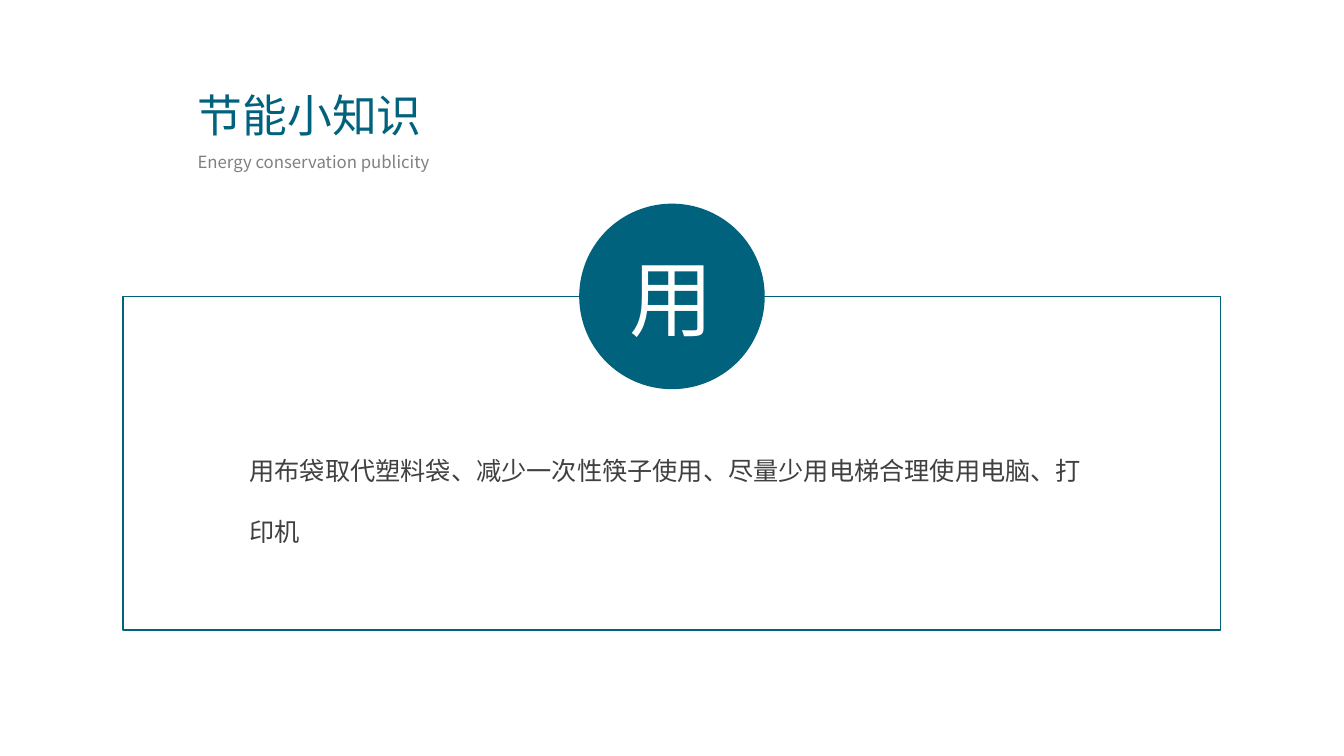
import pptx
import pptx.util
from lxml import etree
from pptx.dml.color import RGBColor
from pptx.enum.shapes import MSO_SHAPE
from pptx.enum.text import MSO_ANCHOR, MSO_AUTO_SIZE, PP_ALIGN
from pptx.oxml.ns import qn
from pptx.util import Cm, Pt

# Content
TITLE = "节能小知识"
SUBTITLE = "Energy conservation publicity"
KEYWORD = "用"
TIP = "用布袋取代塑料袋、减少一次性筷子使用、尽量少用电梯合理使用电脑、打印机"

FONT = "Noto Sans CJK SC"
TEAL, WHITE, DARK, GREY = "00627D", "FFFFFF", "404040", "808080"

# Layout in centimetres
SLIDE_W, SLIDE_H = 33.87, 19.05
HEAD_LEFT = 4.98
FRAME_W, FRAME_H, FRAME_TOP = 27.66, 8.41, 7.47
FRAME_LEFT = (SLIDE_W - FRAME_W) / 2
CIRCLE_D = 4.64
TIP_W = 21.79


def rgb(value):
    return RGBColor.from_string(value)


def write(sp, text, size, color, align=PP_ALIGN.LEFT, spacing=1.0,
          anchor=MSO_ANCHOR.TOP, margins=None, wrap=True):
    tf = sp.text_frame
    tf.auto_size = MSO_AUTO_SIZE.NONE
    tf.word_wrap = wrap
    tf.vertical_anchor = anchor
    if margins:
        (tf.margin_left, tf.margin_top,
         tf.margin_right, tf.margin_bottom) = map(Cm, margins)
    p = tf.paragraphs[0]
    p.text = text
    p.alignment = align
    p.line_spacing = spacing
    p.font.size = Pt(size)
    p.font.color.rgb = rgb(color)
    p.font.name = FONT
    # Chinese glyphs take the East Asian typeface
    props = p._p.pPr.find(qn("a:defRPr"))
    etree.SubElement(props, qn("a:ea"), typeface=FONT)


def add_outlined(shapes, kind, left, top, width, height, fill=None):
    sp = shapes.add_shape(kind, Cm(left), Cm(top), Cm(width), Cm(height))
    sp.shadow.inherit = False
    if fill:
        sp.fill.solid()
        sp.fill.fore_color.rgb = rgb(fill)
    else:
        sp.fill.background()
    sp.line.color.rgb = rgb(TEAL)
    sp.line.width = Pt(1)
    return sp


prs = pptx.Presentation()
prs.slide_width, prs.slide_height = Cm(SLIDE_W), Cm(SLIDE_H)
s = prs.slides.add_slide(prs.slide_layouts[5])

# Tip text
sp = s.shapes.add_textbox(Cm((SLIDE_W - TIP_W) / 2), Cm(10.59), Cm(TIP_W), Cm(4.65))
write(sp, TIP, 18, DARK, spacing=2.0)

# Frame with the keyword circle centred on its top edge
add_outlined(s.shapes, MSO_SHAPE.RECTANGLE, FRAME_LEFT, FRAME_TOP, FRAME_W, FRAME_H)
sp = add_outlined(s.shapes, MSO_SHAPE.OVAL, (SLIDE_W - CIRCLE_D) / 2,
                  FRAME_TOP - CIRCLE_D / 2, CIRCLE_D, CIRCLE_D, TEAL)
write(sp, KEYWORD, 60, WHITE, PP_ALIGN.CENTER, anchor=MSO_ANCHOR.MIDDLE)

# Heading
sp = s.shapes.title
sp.left, sp.top, sp.width, sp.height = Cm(HEAD_LEFT), Cm(2.21), Cm(15.01), Cm(1.37)
write(sp, TITLE, 32, TEAL, anchor=MSO_ANCHOR.MIDDLE, margins=(0, 0, 0, 0))
sp = s.shapes.add_textbox(Cm(HEAD_LEFT), Cm(3.43), Cm(7.8), Cm(0.97))
write(sp, SUBTITLE, 12, GREY, spacing=1.5, margins=(0, 0.13, 0.25, 0.13), wrap=False)

prs.save("out.pptx")
